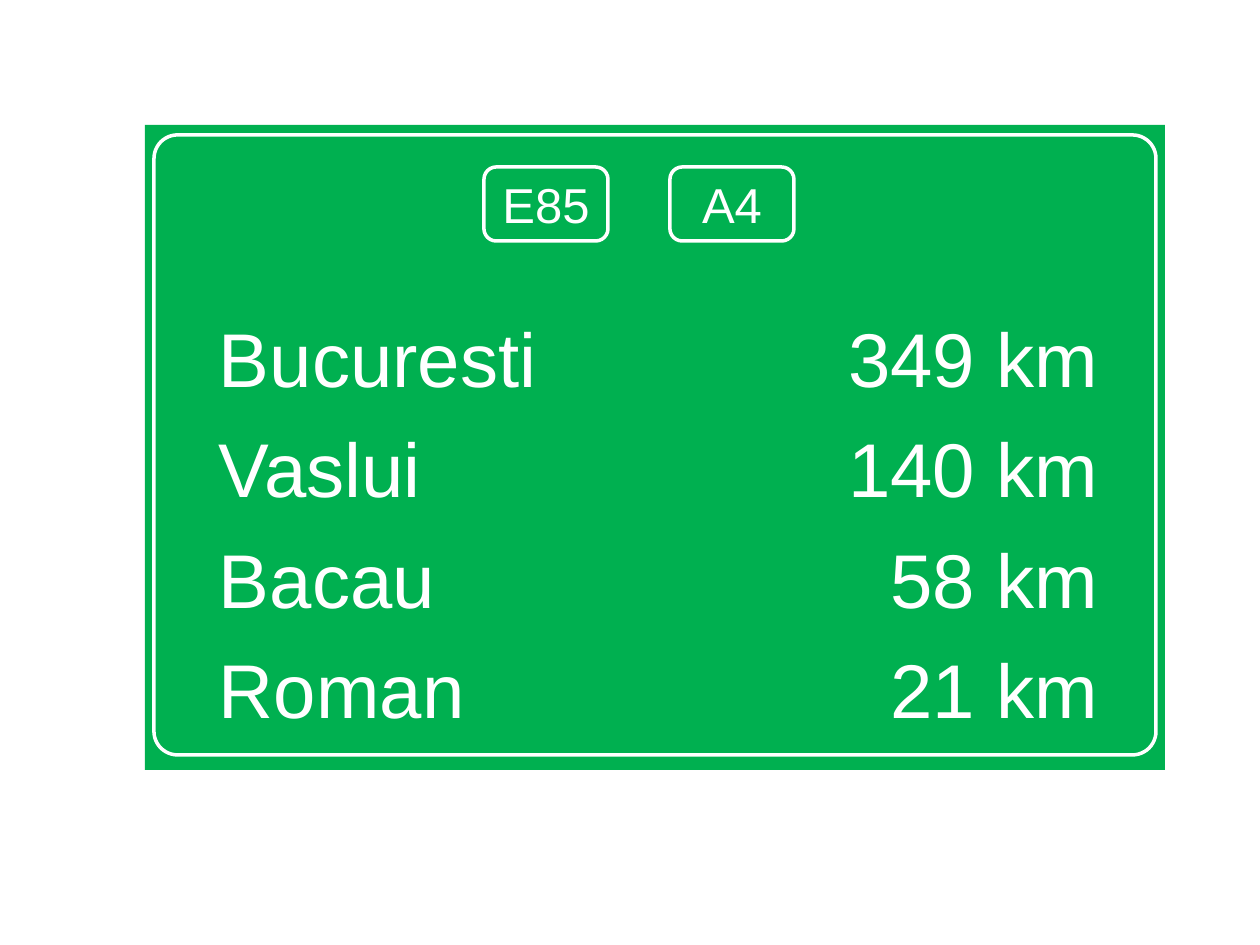
from lxml.etree import SubElement
from pptx import Presentation
from pptx.dml.color import RGBColor
from pptx.enum.shapes import MSO_SHAPE
from pptx.enum.text import MSO_ANCHOR, PP_ALIGN
from pptx.oxml.ns import qn
from pptx.util import Pt

COLORS = {"green": "00B050", "white": "FFFFFF"}
FONT = "Arial"
ROADS = ["E85", "A4"]
DISTANCES = [("Bucuresti", "349 km"), ("Vaslui", "140 km"),
             ("Bacau", "58 km"), ("Roman", "21 km")]

PANEL = (145, 125, 1020, 645)
BORDER = (154, 135, 1002, 620)
BADGE_LEFT, BADGE_TOP, BADGE_WIDTH, BADGE_HEIGHT = 484, 167, 124, 74
BADGE_STEP = 186
TEXT_LEFT, TEXT_TOP, TEXT_RIGHT = 219, 311, 1098


def px(value):
    return round(value * 914400 / 126)


def color(name):
    return RGBColor.from_string(COLORS[name])


def add_box(slide, kind, bounds, fill=None, line=None):
    box = slide.shapes.add_shape(kind, *map(px, bounds))
    box.shadow.inherit = False
    if fill:
        box.fill.solid()
        box.fill.fore_color.rgb = color(fill)
    else:
        box.fill.background()
    if line:
        box.line.color.rgb = color(line)
        box.line.width = Pt(2)
    else:
        box.line.fill.background()
    return box


def write(para, text, size, align):
    para.text = text
    para.alignment = align
    for span in para.runs:
        span.font.name = FONT
        span.font.size = Pt(size)
        span.font.color.rgb = color("white")


def add_right_tab(para, position):
    tabs = SubElement(para._p.get_or_add_pPr(), qn("a:tabLst"))
    SubElement(tabs, qn("a:tab"), pos=str(px(position)), algn="r")


def add_distance_panel(slide):
    panel = add_box(slide, MSO_SHAPE.RECTANGLE, PANEL, fill="green")
    frame = panel.text_frame
    frame.word_wrap = True
    frame.vertical_anchor = MSO_ANCHOR.TOP
    frame.margin_left = px(TEXT_LEFT - PANEL[0])
    frame.margin_top = px(TEXT_TOP - PANEL[1])
    frame.margin_right = px(10)
    frame.margin_bottom = px(20)
    for index, row in enumerate(DISTANCES):
        para = frame.add_paragraph() if index else frame.paragraphs[0]
        write(para, "\t".join(row), 43.5, PP_ALIGN.LEFT)
        para.space_before = Pt(11 if index else 0)
        add_right_tab(para, TEXT_RIGHT - TEXT_LEFT)


def main():
    deck = Presentation()
    deck.slide_width, deck.slide_height = px(1260), px(945)
    slide = deck.slides.add_slide(deck.slide_layouts[6])

    add_distance_panel(slide)
    border = add_box(slide, MSO_SHAPE.ROUNDED_RECTANGLE, BORDER, line="white")
    border.adjustments[0] = 0.038

    for index, road in enumerate(ROADS):
        bounds = (BADGE_LEFT + index * BADGE_STEP, BADGE_TOP, BADGE_WIDTH, BADGE_HEIGHT)
        badge = add_box(slide, MSO_SHAPE.ROUNDED_RECTANGLE, bounds, "green", "white")
        badge.text_frame.vertical_anchor = MSO_ANCHOR.MIDDLE
        write(badge.text_frame.paragraphs[0], road, 28, PP_ALIGN.CENTER)

    deck.save("out.pptx")


if __name__ == "__main__":
    main()
